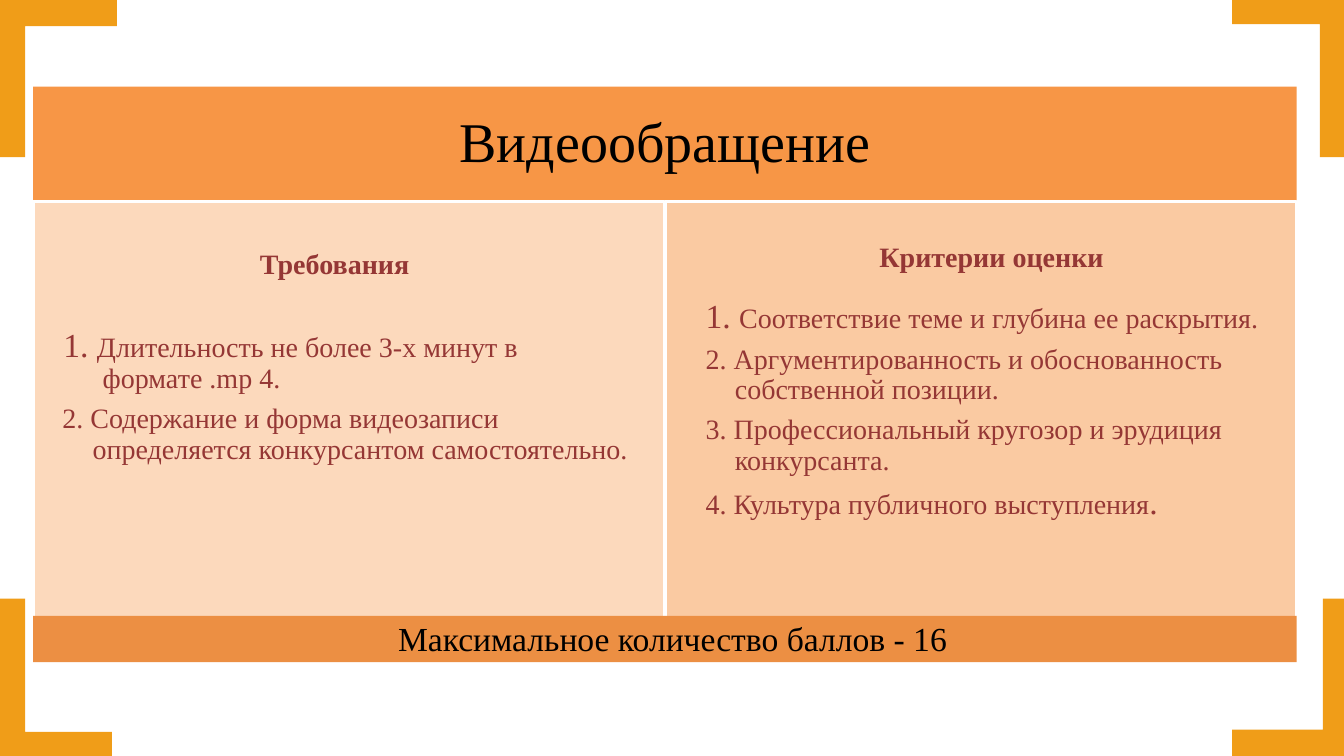
from dataclasses import dataclass

from lxml import etree
from pptx import Presentation
from pptx import util as u
from pptx.dml.color import RGBColor
from pptx.enum import shapes, text
from pptx.oxml.ns import qn

PX = 9144  # EMU per px, 100 px to the inch
FONT = "Times New Roman"
GOLD = RGBColor(0xF0, 0x9D, 0x18)
ORANGE = RGBColor(0xF7, 0x96, 0x46)
PEACH = RGBColor(0xFC, 0xD5, 0xB5)
BAR = RGBColor(0xEC, 0x8F, 0x43)
WHITE = RGBColor(0xFF, 0xFF, 0xFF)
BLACK = RGBColor(0, 0, 0)
BROWN = RGBColor(0x95, 0x37, 0x35)
LEFT, CENTER = text.PP_ALIGN.LEFT, text.PP_ALIGN.CENTER


@dataclass
class Corner:
    x: int
    y: int
    reach_x: int
    reach_y: int
    thick_x: int
    thick_y: int


@dataclass
class Run:
    text: str
    size: int = 20
    color: RGBColor = BROWN
    bold: bool = False


@dataclass
class Para:
    runs: list[Run]
    margin: int = 0
    indent: int = 0
    align: text.PP_ALIGN = LEFT
    spacing: float | None = 0.9
    after: int = 7


@dataclass
class Panel:
    box: tuple[int, int, int, int]
    fill: RGBColor
    alpha: int
    outlined: bool
    paras: list[Para]
    inset: int = 10
    bottom: int = 10


@dataclass
class Label:
    box: tuple[int, int, int, int]
    run: Run
    align: text.PP_ALIGN = LEFT
    wrap: bool = True


CORNERS = [
    Corner(0, 750, 111, -156, 25, -24),
    Corner(1333, 0, -111, 156, -24, 24),
    Corner(1333, 750, -111, -156, -21, -26),
    Corner(0, 0, 116, 156, 25, 26),
]

REQUIREMENTS = [
    Para([Run("1. ", 24), Run("Длительность не более 3-х минут в формате .mp 4.")], 59, -39),
    Para([Run("2. Содержание и форма видеозаписи определяется "
              "конкурсантом самостоятельно.")], 49, -30),
]
CRITERIA = [
    Para([Run("1. ", 24), Run("Соответствие теме и глубина ее раскрытия.")], 0, 30),
    Para([Run("2. Аргументированность и обоснованность собственной позиции.")], 59, -29),
    Para([Run("3. Профессиональный кругозор и эрудиция конкурсанта.")], 59, -29),
    Para([Run("4. Культура публичного выступления"), Run(".", 24)], 0, 30),
]
TITLE = Para([Run("Видеообращение", 40, BLACK)], align=CENTER, after=14)

PANELS = [
    Panel((33, 86, 1253, 114), ORANGE, 100, False, [TITLE], 17, 17),
    Panel((33, 200, 626, 425), PEACH, 90, True, REQUIREMENTS, bottom=48),
    Panel((660, 200, 626, 415), ORANGE, 50, True, CRITERIA),
    Panel((33, 611, 1253, 46), BAR, 100, False, []),
]
LABELS = [
    Label((248, 240, 172, 44), Run("Требования", bold=True), wrap=False),
    Label((817, 233, 333, 44), Run("Критерии оценки", bold=True), CENTER),
    Label((385, 608, 567, 50), Run("Максимальное количество баллов - 16", 24, BLACK)),
]


def px(n: int) -> u.Emu:
    return u.Emu(n * PX)


def write(tf, paras: list[Para]) -> None:
    for i, para in enumerate(paras):
        p = tf.add_paragraph() if i else tf.paragraphs[0]
        p.alignment = para.align
        if para.spacing:
            p.line_spacing = para.spacing
            p.space_after = u.Pt(para.after)
        if para.indent:
            pPr = p._p.get_or_add_pPr()
            pPr.set("marL", str(px(para.margin)))
            pPr.set("indent", str(px(para.indent)))
        for run in para.runs:
            r = p.add_run()
            r.text = run.text
            r.font.name = FONT
            r.font.size = u.Pt(run.size)
            r.font.bold = run.bold
            r.font.color.rgb = run.color


def draw_corner(s, c: Corner) -> None:
    inner_x, inner_y = c.x + c.thick_x, c.y + c.thick_y
    end_x, end_y = c.x + c.reach_x, c.y + c.reach_y
    fb = s.shapes.build_freeform(c.x, c.y, scale=float(PX))
    fb.add_line_segments([(end_x, c.y), (end_x, inner_y), (inner_x, inner_y),
                          (inner_x, end_y), (c.x, end_y)])
    sp = fb.convert_to_shape()
    sp.shadow.inherit = False
    sp.fill.solid()
    sp.fill.fore_color.rgb = GOLD
    sp.line.fill.background()


def draw_panel(s, panel: Panel) -> None:
    sp = s.shapes.add_shape(shapes.MSO_SHAPE.RECTANGLE, *map(px, panel.box))
    sp.shadow.inherit = False
    sp.fill.solid()
    sp.fill.fore_color.rgb = panel.fill
    if panel.alpha < 100:
        clr = sp._element.spPr.find(qn("a:solidFill"))[0]
        etree.SubElement(clr, qn("a:alpha")).set("val", str(panel.alpha * 1000))
    if panel.outlined:
        sp.line.color.rgb = WHITE
        sp.line.width = u.Pt(2)
    else:
        sp.line.fill.background()
    tf = sp.text_frame
    tf.word_wrap = True
    tf.vertical_anchor = text.MSO_ANCHOR.MIDDLE
    tf.margin_left = tf.margin_right = tf.margin_top = px(panel.inset)
    tf.margin_bottom = px(panel.bottom)
    write(tf, panel.paras)


def draw_label(s, label: Label) -> None:
    tf = s.shapes.add_textbox(*map(px, label.box)).text_frame
    tf.word_wrap = label.wrap
    tf.auto_size = text.MSO_AUTO_SIZE.SHAPE_TO_FIT_TEXT
    write(tf, [Para([label.run], align=label.align, spacing=None)])


def main() -> None:
    prs = Presentation()
    prs.slide_width, prs.slide_height = px(1333), px(750)
    s = prs.slides.add_slide(prs.slide_layouts[6])

    # Corner brackets
    for corner in CORNERS:
        draw_corner(s, corner)
    # Title band, two columns and the score bar
    for panel in PANELS:
        draw_panel(s, panel)
    # Column headings and the maximum score
    for label in LABELS:
        draw_label(s, label)

    prs.save("out.pptx")


if __name__ == "__main__":
    main()
